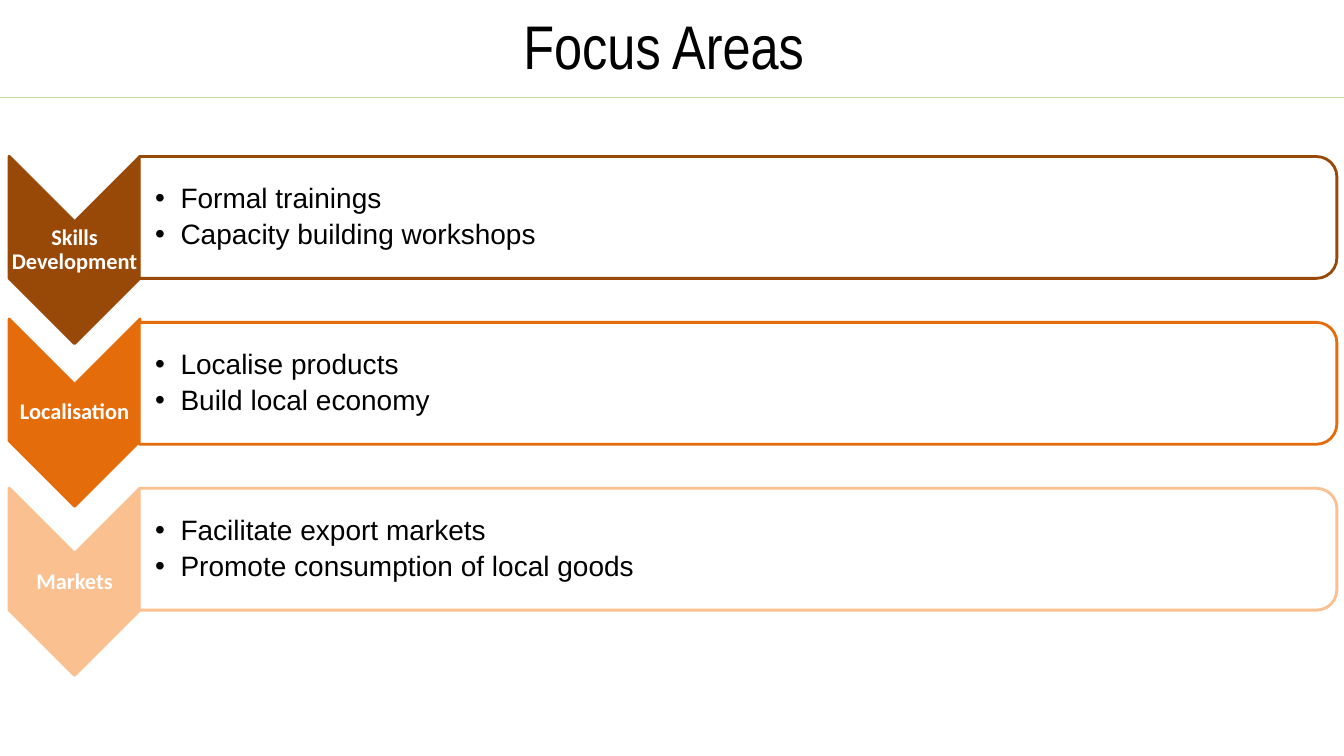
from lxml.etree import SubElement
from pptx import Presentation
from pptx.dml.color import RGBColor
from pptx.enum.shapes import MSO_SHAPE
from pptx.enum.text import MSO_ANCHOR, PP_ALIGN
from pptx.oxml.ns import qn
from pptx.util import Cm, Pt

BLACK = RGBColor(0x00, 0x00, 0x00)
WHITE = RGBColor(0xFF, 0xFF, 0xFF)
SAGE = RGBColor(0xC3, 0xD6, 0x9B)
BROWN = RGBColor(0x98, 0x48, 0x07)
ORANGE = RGBColor(0xE4, 0x6C, 0x0A)
PEACH = RGBColor(0xFA, 0xC0, 0x90)

TITLE = "Focus Areas"
# label, colour, chevron centre in cm, bullets
FOCUS_AREAS = [
    ("Skills Development", BROWN, 6.3, ["Formal trainings", "Capacity building workshops"]),
    ("Localisation", ORANGE, 10.4, ["Localise products", "Build local economy"]),
    ("Markets", PEACH, 14.66, ["Facilitate export markets", "Promote consumption of local goods"]),
]

TITLE_FONT = {"name": "Arial Narrow", "size": Pt(44)}
LABEL_FONT = {"name": "Calibri", "size": Pt(16), "bold": True}
BULLET_FONT = {"name": "Arial", "size": Pt(20)}
LABEL_FORMAT = {"alignment": PP_ALIGN.CENTER, "line_spacing": 0.9}
BULLET_FORMAT = {"alignment": PP_ALIGN.LEFT, "line_spacing": 0.9, "space_after": Pt(4)}

# Centimetres
CHEVRON_X, CHEVRON_LENGTH, CHEVRON_WIDTH = 1.88, 4.72, 3.3
LABEL_HEIGHT = 1.42
PANEL_X, PANEL_LENGTH, PANEL_HEIGHT = 18.6, 30.18, 3.07
FIRST_PANEL_Y, PANEL_PITCH = 5.48, 4.18
BULLETS_X, BULLETS_WIDTH, BULLETS_HEIGHT = 18.51, 30.02, 2.77
TEXT_INSET, BULLETS_INSET, BULLET_INDENT = 0.03, 0.41, 0.64


def set_all(target, values):
    for name, value in values.items():
        setattr(target, name, value)


def centred(x, y, width, height):
    """Return left, top, width and height of a box centred on x, y."""
    return Cm(x - width / 2), Cm(y - height / 2), Cm(width), Cm(height)


def add_turned_shape(slide, kind, place, fill, line):
    """Add a shape turned a quarter clockwise."""
    shape = slide.shapes.add_shape(kind, *place)
    shape.shadow.inherit = False
    shape.rotation = 90
    shape.fill.solid()
    shape.fill.fore_color.rgb = fill
    shape.line.color.rgb = line
    shape.line.width = Pt(2)
    return shape


def write(frame, lines, font, colour, formatting, left_inset=TEXT_INSET, bulleted=False):
    set_all(frame, {
        "word_wrap": True, "vertical_anchor": MSO_ANCHOR.MIDDLE,
        "margin_left": Cm(left_inset), "margin_right": Cm(TEXT_INSET),
        "margin_top": Cm(TEXT_INSET), "margin_bottom": Cm(TEXT_INSET),
    })
    for index, line in enumerate(lines):
        para = frame.add_paragraph() if index else frame.paragraphs[0]
        set_all(para, formatting)
        if bulleted:
            properties = para._p.get_or_add_pPr()
            properties.set("marL", str(Cm(BULLET_INDENT)))
            properties.set("indent", str(-Cm(BULLET_INDENT)))
            SubElement(properties, qn("a:buFont"), typeface="Arial")
            SubElement(properties, qn("a:buChar"), char="•")
        span = para.add_run()
        span.text = line
        set_all(span.font, font)
        span.font.color.rgb = colour


def add_title(slide):
    box = slide.shapes.add_shape(MSO_SHAPE.RECTANGLE, Cm(-0.25), Cm(-0.18), Cm(34.31), Cm(2.64))
    box.shadow.inherit = False
    box.fill.background()
    box.line.color.rgb = SAGE
    box.line.width = Pt(0.75)
    write(box.text_frame, [TITLE], TITLE_FONT, BLACK, {"alignment": PP_ALIGN.CENTER})
    box.text_frame.margin_right = Cm(0.38)


def add_focus_area(slide, label, colour, chevron_y, bullets, panel_y):
    add_turned_shape(slide, MSO_SHAPE.CHEVRON,
                     centred(CHEVRON_X, chevron_y, CHEVRON_LENGTH, CHEVRON_WIDTH), colour, colour)
    box = slide.shapes.add_textbox(*centred(CHEVRON_X, chevron_y, CHEVRON_WIDTH, LABEL_HEIGHT))
    write(box.text_frame, [label], LABEL_FONT, WHITE, LABEL_FORMAT)

    panel = add_turned_shape(slide, MSO_SHAPE.ROUND_2_SAME_RECTANGLE,
                             centred(PANEL_X, panel_y, PANEL_HEIGHT, PANEL_LENGTH), WHITE, colour)
    fill_colour = panel._element.spPr.find(qn("a:solidFill"))[0]
    SubElement(fill_colour, qn("a:alpha"), val="90000")
    box = slide.shapes.add_textbox(*centred(BULLETS_X, panel_y, BULLETS_WIDTH, BULLETS_HEIGHT))
    write(box.text_frame, bullets, BULLET_FONT, BLACK, BULLET_FORMAT, BULLETS_INSET, bulleted=True)


def main():
    deck = Presentation()
    deck.slide_width, deck.slide_height = Cm(33.87), Cm(19.05)
    slide = deck.slides.add_slide(deck.slide_layouts[6])
    add_title(slide)
    for row, area in enumerate(FOCUS_AREAS):
        add_focus_area(slide, *area, FIRST_PANEL_Y + row * PANEL_PITCH)
    deck.save("out.pptx")


if __name__ == "__main__":
    main()
